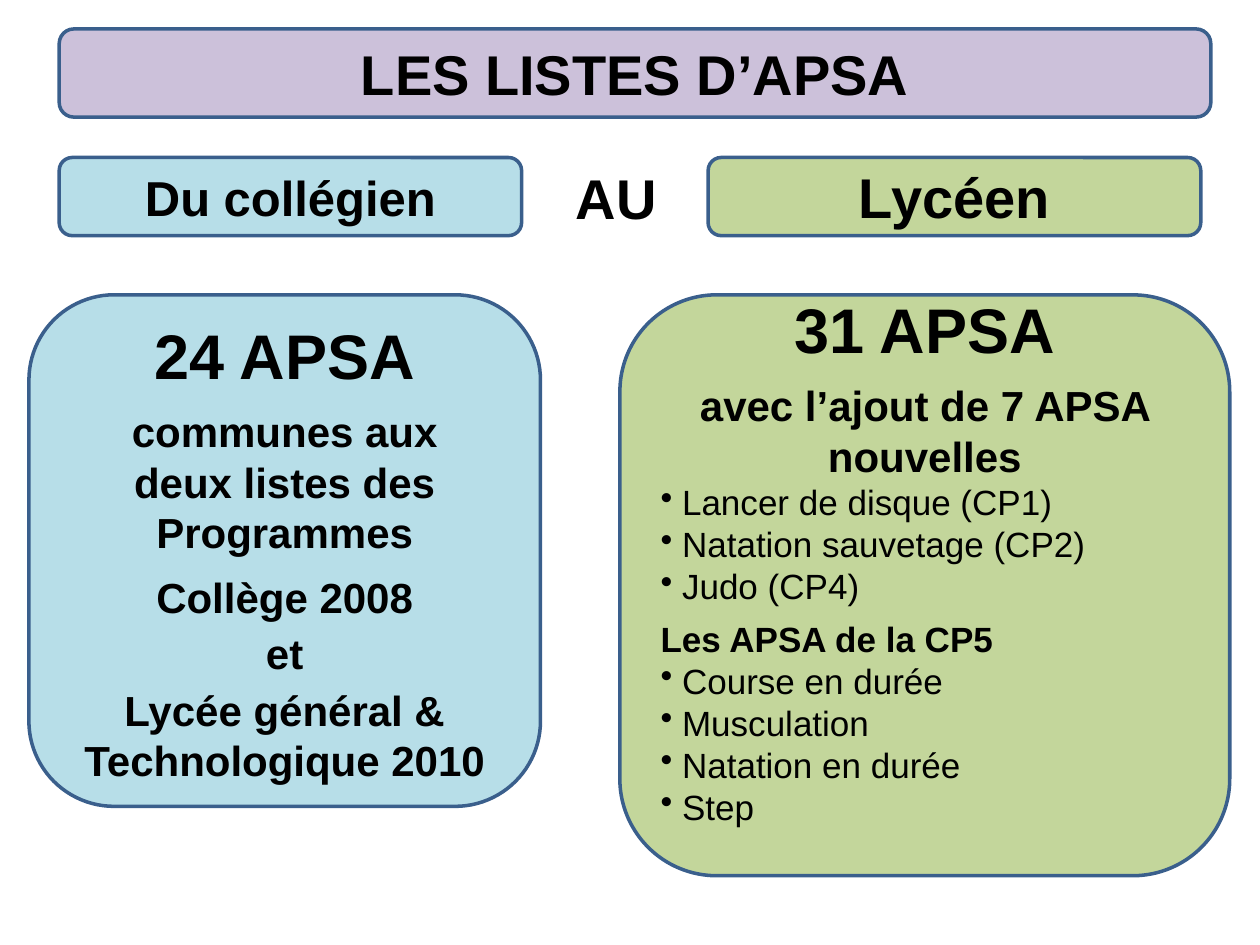
from pptx import Presentation
from pptx.dml.color import RGBColor
from pptx.enum.shapes import MSO_SHAPE
from pptx.enum.text import MSO_ANCHOR, PP_ALIGN
from pptx.oxml.ns import qn
from pptx.util import Inches, Pt

BLACK = RGBColor(0x00, 0x00, 0x00)
OUTLINE = RGBColor(0x3A, 0x5F, 0x8C)
PURPLE = RGBColor(0xCC, 0xC1, 0xDA)
BLUE = RGBColor(0xB7, 0xDE, 0xE8)
GREEN = RGBColor(0xC3, 0xD6, 0x9B)

# Paragraph kinds: alignment, bold, bullet
HEADING = (PP_ALIGN.CENTER, True, False)
SUBHEAD = (PP_ALIGN.LEFT, True, False)
BULLET = (PP_ALIGN.LEFT, False, True)

# Content: each line is (text, size, space before in points, kind)
TITLE = [("LES LISTES D’APSA", 32, 0, HEADING)]
LINK_WORD = [("AU", 32, 0, HEADING)]
COLLEGE_LINES = [
    ("24 APSA", 36, 0, HEADING),
    ("communes aux", 24, 8, HEADING),
    ("deux listes des", 24, 0, HEADING),
    ("Programmes", 24, 0, HEADING),
    ("Collège 2008", 24, 8, HEADING),
    ("et", 24, 3.5, HEADING),
    ("Lycée général &", 24, 3.5, HEADING),
    ("Technologique 2010", 24, 0, HEADING),
]
NEW_APSA = ["Lancer de disque (CP1)", "Natation sauvetage (CP2)", "Judo (CP4)"]
CP5_APSA = ["Course en durée", "Musculation", "Natation en durée", "Step"]
LYCEE_LINES = [
    ("31 APSA", 36, 0, HEADING),
    ("avec l’ajout de 7 APSA nouvelles", 24, 8, HEADING),
    *[(name, 20, 0, BULLET) for name in NEW_APSA],
    ("Les APSA de la CP5", 20, 6, SUBHEAD),
    *[(name, 20, 0, BULLET) for name in CP5_APSA],
]

# Panels: left, top, width, height, fill, lines, bottom margin
TITLE_AREA = (0.47, 0.23, 9.14, 0.7)
LINK_AREA = (4.38, 1.25, 1.02, 0.64)
PANELS = [
    (0.47, 1.25, 3.67, 0.62, BLUE, [("Du collégien", 28, 0, HEADING)], 0.05),
    (5.62, 1.25, 3.91, 0.62, GREEN, [("Lycéen", 32, 0, HEADING)], 0.05),
    (0.23, 2.34, 4.06, 4.06, BLUE, COLLEGE_LINES, 0.05),
    (4.92, 2.34, 4.84, 4.61, GREEN, LYCEE_LINES, 0.47),
]


def set_all(target, values):
    for name, value in values.items():
        setattr(target, name, value)


def add_bullet(para):
    props = para._p.get_or_add_pPr()
    props.set("marL", str(Inches(0.17)))
    props.set("indent", str(-Inches(0.17)))
    bullet = props.makeelement(qn("a:buChar"), {"char": "•"})
    props.append(bullet)


def write_lines(frame, lines, anchor=MSO_ANCHOR.MIDDLE, bottom=0.05):
    set_all(frame, {
        "word_wrap": True, "vertical_anchor": anchor,
        "margin_left": Inches(0.1), "margin_right": Inches(0.1),
        "margin_top": Inches(0.05), "margin_bottom": Inches(bottom),
    })
    for index, (text, size, before, kind) in enumerate(lines):
        align, bold, bulleted = kind
        para = frame.add_paragraph() if index else frame.paragraphs[0]
        set_all(para, {"alignment": align, "space_before": Pt(before),
                       "space_after": Pt(0), "line_spacing": 1.0})
        if bulleted:
            add_bullet(para)
        span = para.add_run()
        span.text = text
        set_all(span.font, {"name": "Arial", "size": Pt(size), "bold": bold})
        span.font.color.rgb = BLACK


def add_panel(page, area, fill):
    panel = page.shapes.add_shape(MSO_SHAPE.ROUNDED_RECTANGLE, *map(Inches, area))
    panel.shadow.inherit = False
    panel.fill.solid()
    panel.fill.fore_color.rgb = fill
    panel.line.color.rgb = OUTLINE
    panel.line.width = Pt(2)
    return panel


deck = Presentation()
set_all(deck, {"slide_width": Inches(10), "slide_height": Inches(7.5)})
page = deck.slides.add_slide(deck.slide_layouts[5])

# Title placed over its banner
title = page.shapes.title
banner = add_panel(page, TITLE_AREA, PURPLE)
title._element.addprevious(banner._element)
set_all(title, dict(zip(("left", "top", "width", "height"), map(Inches, TITLE_AREA))))
write_lines(title.text_frame, TITLE)

# Linking word between the two headings
link_box = page.shapes.add_textbox(*map(Inches, LINK_AREA))
write_lines(link_box.text_frame, LINK_WORD, MSO_ANCHOR.TOP)

# Headings and lists
for *area, fill, lines, bottom in PANELS:
    panel = add_panel(page, area, fill)
    write_lines(panel.text_frame, lines, bottom=bottom)

deck.save("out.pptx")
